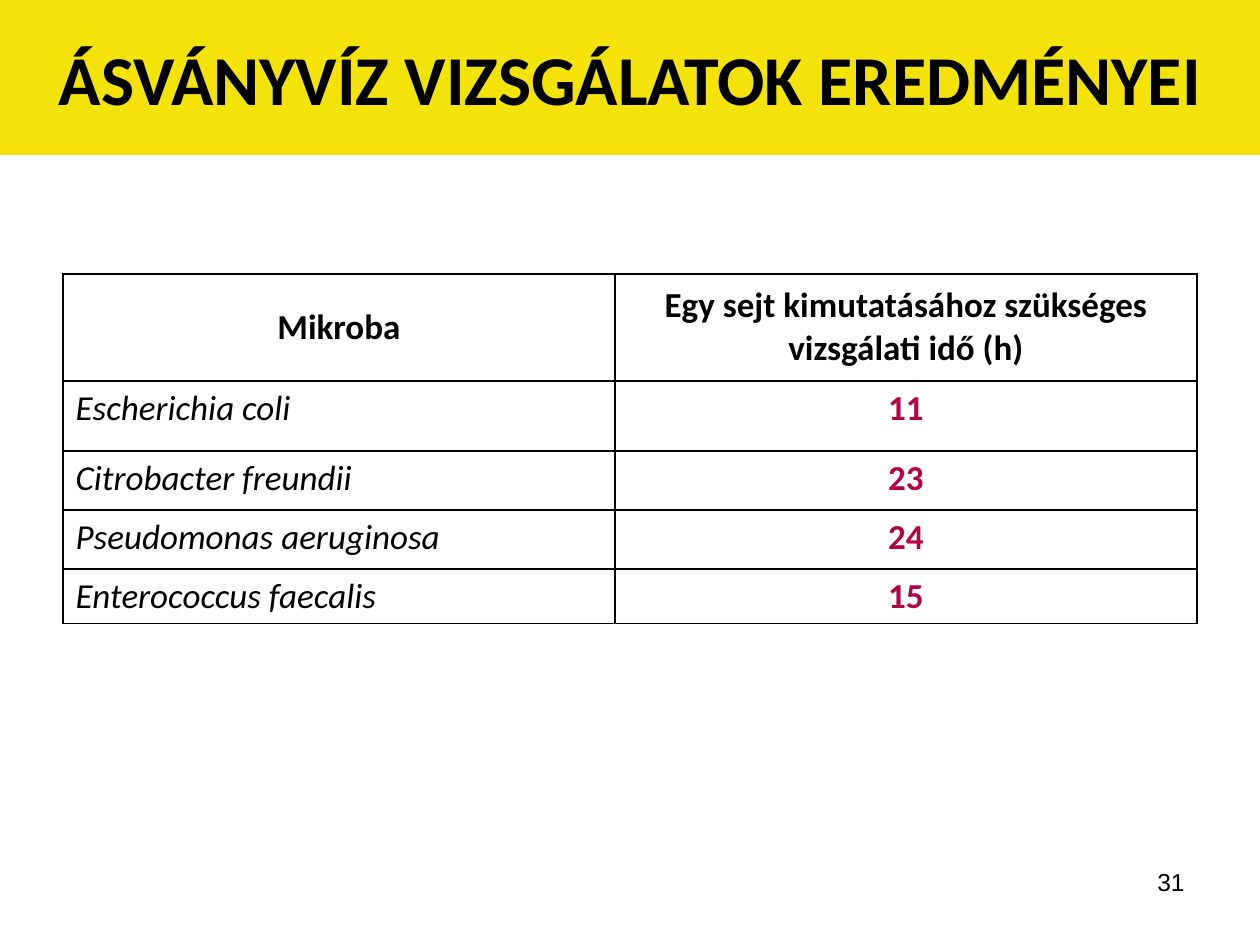
from dataclasses import dataclass

from lxml.etree import SubElement
from pptx import Presentation
from pptx.dml.color import RGBColor
from pptx.enum.shapes import MSO_SHAPE
from pptx.enum.text import MSO_ANCHOR, PP_ALIGN
from pptx.oxml.ns import qn
from pptx.util import Emu, Pt

EMU_PER_PIXEL = 914400 / 126


def px(length):
    return Emu(round(length * EMU_PER_PIXEL))


@dataclass(frozen=True)
class Theme:
    ink: str = "000000"
    paper: str = "FFFFFF"
    banner: str = "F4E30A"
    result: str = "B80047"
    main_font: str = "Calibri"
    number_font: str = "Arial"
    title_size: int = 40
    table_size: int = 20
    number_size: int = 14
    border_points: int = 1


class SlideBuilder:
    def __init__(self, slide, theme):
        self.slide = slide
        self.theme = theme

    def add_text(self, frame, text, size, align, font=None, color=None,
                 bold=False, italic=False):
        frame.word_wrap = True
        paragraph = frame.paragraphs[0]
        paragraph.alignment = align
        run = paragraph.add_run()
        run.text = text
        run.font.name = font or self.theme.main_font
        run.font.size = Pt(size)
        run.font.bold = bold
        run.font.italic = italic
        run.font.color.rgb = RGBColor.from_string(color or self.theme.ink)

    def banner(self, text, left, top, width, height):
        shape = self.slide.shapes.add_shape(
            MSO_SHAPE.RECTANGLE, px(left), px(top), px(width), px(height))
        shape.shadow.inherit = False
        shape.fill.solid()
        shape.fill.fore_color.rgb = RGBColor.from_string(self.theme.banner)
        shape.line.fill.background()
        shape.text_frame.vertical_anchor = MSO_ANCHOR.MIDDLE
        self.add_text(shape.text_frame, text, self.theme.title_size,
                      PP_ALIGN.CENTER, bold=True)

    def slide_number(self, text, left, top, width, height):
        box = self.slide.shapes.add_textbox(
            px(left), px(top), px(width), px(height))
        self.add_text(box.text_frame, text, self.theme.number_size,
                      PP_ALIGN.RIGHT, font=self.theme.number_font)

    def border(self, cell):
        """Draw all four sides; lines must precede the fill in the XML."""
        properties = cell._tc.get_or_add_tcPr()
        for side in ("a:lnL", "a:lnR", "a:lnT", "a:lnB"):
            line = SubElement(properties, qn(side),
                              w=str(Pt(self.theme.border_points)))
            fill = SubElement(line, qn("a:solidFill"))
            SubElement(fill, qn("a:srgbClr"), val=self.theme.ink)

    def table(self, headers, records, left, top, widths, heights):
        rows = [headers, *records]
        table = self.slide.shapes.add_table(
            len(rows), len(headers), px(left), px(top),
            px(sum(widths)), px(sum(heights))).table
        table.first_row = table.horz_banding = False
        for column, width in zip(table.columns, widths):
            column.width = px(width)
        for row, height in zip(table.rows, heights):
            row.height = px(height)
        for row_index, values in enumerate(rows):
            for column_index, value in enumerate(values):
                self.table_cell(table.cell(row_index, column_index), value,
                                is_header=row_index == 0,
                                is_name=column_index == 0)

    def table_cell(self, cell, text, is_header, is_name):
        theme = self.theme
        self.border(cell)
        if is_header:
            cell.fill.solid()
            cell.fill.fore_color.rgb = RGBColor.from_string(theme.paper)
            cell.vertical_anchor = MSO_ANCHOR.MIDDLE
            style = dict(align=PP_ALIGN.CENTER, bold=True)
        else:
            cell.fill.background()
            if is_name:
                style = dict(align=PP_ALIGN.LEFT, italic=True)
            else:
                style = dict(align=PP_ALIGN.CENTER, bold=True,
                             color=theme.result)
        self.add_text(cell.text_frame, text, theme.table_size, **style)


def main():
    presentation = Presentation()
    presentation.slide_width = px(1260)
    presentation.slide_height = px(945)
    slide = presentation.slides.add_slide(presentation.slide_layouts[6])
    builder = SlideBuilder(slide, Theme())

    builder.slide_number("31", 903, 861, 294, 66)
    builder.banner("ÁSVÁNYVÍZ VIZSGÁLATOK EREDMÉNYEI", 0, 0, 1260, 155)
    builder.table(
        ("Mikroba", "Egy sejt kimutatásához szükséges vizsgálati idő (h)"),
        [("Escherichia coli", "11"),
         ("Citrobacter freundii", "23"),
         ("Pseudomonas aeruginosa", "24"),
         ("Enterococcus faecalis", "15")],
        left=63, top=274, widths=(552, 582), heights=(107, 70, 59, 59, 54))

    presentation.save("out.pptx")


if __name__ == "__main__":
    main()
